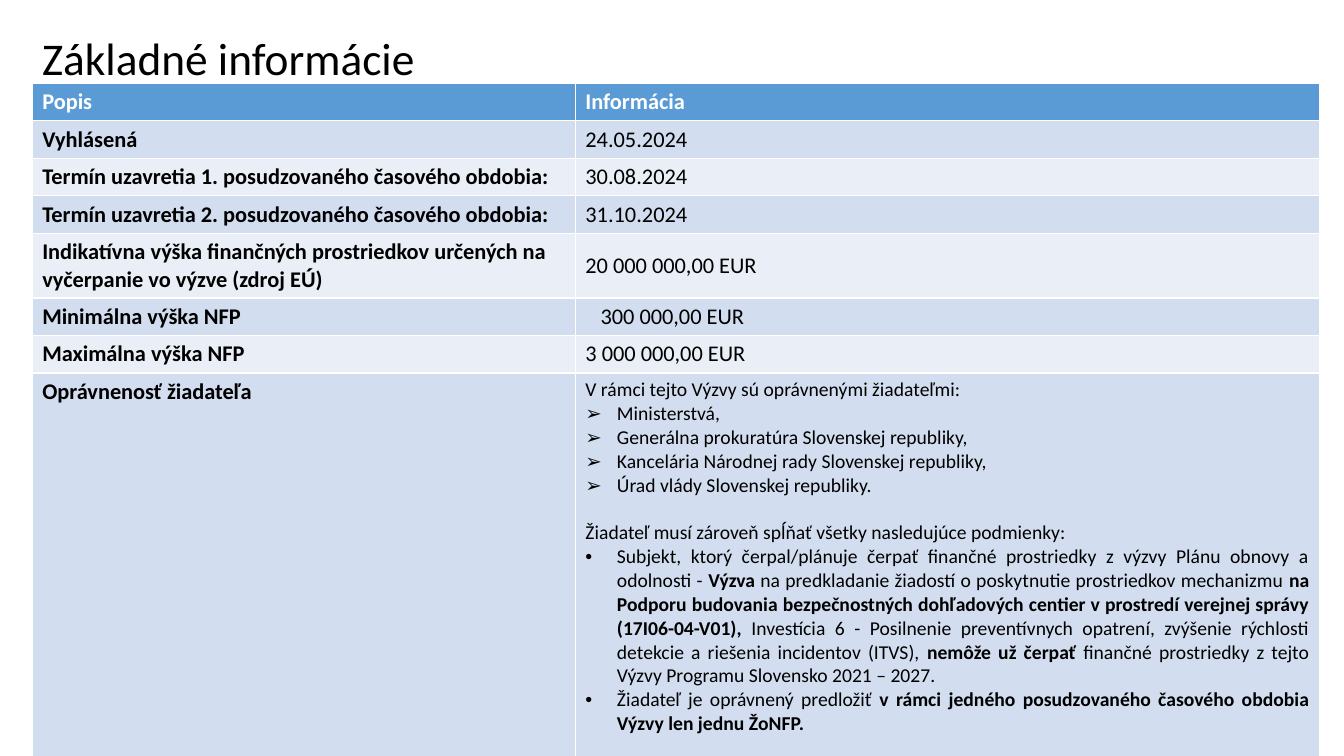
from dataclasses import dataclass

from lxml.etree import SubElement as Sub
from pptx import Presentation
from pptx.dml.color import RGBColor as RGB
from pptx.enum.text import MSO_ANCHOR as ANCHOR, PP_ALIGN as ALIGN
from pptx.oxml.ns import qn
from pptx.util import Pt


@dataclass(frozen=True)
class Theme:
    font: str = "Calibri"
    bullet_font: str = "Arial"
    black: str = "000000"
    white: str = "FFFFFF"
    header: str = "5B9BD5"
    bands: tuple = ("D2DEEF", "EAEFF7")
    title: float = 32.4
    title_end: float = 39.6
    cell: float = 16
    detail: float = 14
    hanging: float = 22.5
    blank_line: float = 17.1


T = Theme()

FACTS = [
    ("Vyhlásená", "24.05.2024"),
    ("Termín uzavretia 1. posudzovaného časového obdobia:", "30.08.2024"),
    ("Termín uzavretia 2. posudzovaného časového obdobia:", "31.10.2024"),
    ("Indikatívna výška finančných prostriedkov určených na vyčerpanie vo výzve (zdroj EÚ)",
     "20 000 000,00 EUR"),
    ("Minimálna výška NFP", "300 000,00 EUR"),
    ("Maximálna výška NFP", "3 000 000,00 EUR"),
]
FUNDS_ROW, MINIMUM_ROW = 4, 5
LINE_ROW = 26.8
ROW_HEIGHTS = [LINE_ROW] * 4 + [46.2] + [LINE_ROW] * 2 + [275]
COLUMN_WIDTHS = [388, 531.5]

APPLICANTS = [
    "Ministerstvá,",
    "Generálna prokuratúra Slovenskej republiky,",
    "Kancelária Národnej rady Slovenskej republiky,",
    "Úrad vlády Slovenskej republiky.",
]
CONDITIONS = [
    [("Subjekt, ktorý čerpal/plánuje čerpať finančné prostriedky z výzvy Plánu obnovy a odolnosti - ", False),
     ("Výzva", True),
     (" na predkladanie žiadostí o poskytnutie prostriedkov mechanizmu ", False),
     ("na Podporu budovania bezpečnostných dohľadových centier v prostredí verejnej správy (17I06-04-V01), ", True),
     ("Investícia 6 - Posilnenie preventívnych opatrení, zvýšenie rýchlosti detekcie a riešenia incidentov (ITVS), ",
      False),
     ("nemôže už čerpať ", True),
     ("finančné prostriedky z tejto Výzvy Programu Slovensko 2021 – 2027.", False)],
    [("Žiadateľ je oprávnený predložiť ", False),
     ("v rámci jedného posudzovaného časového obdobia Výzvy len jednu ŽoNFP.", True)],
]


def set_attrs(obj, **values):
    for name, value in values.items():
        setattr(obj, name, value)


def add_run(p, text, size, bold=False, color=T.black):
    r = p.add_run()
    r.text = text
    set_attrs(r.font, name=T.font, size=Pt(size), bold=bold)
    r.font.color.rgb = RGB.from_string(color)


def add_bullet(p, char):
    pPr = p._p.get_or_add_pPr()
    pPr.set("marL", str(Pt(T.hanging)))
    pPr.set("indent", str(-Pt(T.hanging)))
    Sub(pPr, qn("a:buFont"), typeface=T.bullet_font)
    Sub(pPr, qn("a:buChar"), char=char)


def fill_eligibility(tf):
    lines = [("", [("V rámci tejto Výzvy sú oprávnenými žiadateľmi: ", False)], 0)]
    lines += [("➢", [(name, False)], 0) for name in APPLICANTS]
    lines.append(("", [("Žiadateľ musí zároveň spĺňať všetky nasledujúce podmienky:", False)], T.blank_line))
    lines += [("•", runs, 0) for runs in CONDITIONS]
    for i, (bullet, runs, before) in enumerate(lines):
        p = tf.add_paragraph() if i else tf.paragraphs[0]
        set_attrs(p, alignment=ALIGN.JUSTIFY, space_before=Pt(before))
        if bullet:
            add_bullet(p, bullet)
        for text, bold in runs:
            add_run(p, text, T.detail, bold)


def add_title(s, x, y, w, h):
    sp = s.shapes.add_textbox(Pt(x), Pt(y), Pt(w), Pt(h))
    tf = sp.text_frame
    set_attrs(tf, word_wrap=True, vertical_anchor=ANCHOR.MIDDLE)
    p = tf.paragraphs[0]
    p.line_spacing = 0.9
    add_run(p, "Základné informácie", T.title)
    add_run(p, " ", T.title_end)


def add_info_table(s, x, y, w, h):
    rows = [("Popis", "Informácia"), *FACTS, ("Oprávnenosť žiadateľa", "")]
    table = s.shapes.add_table(len(rows), 2, Pt(x), Pt(y), Pt(w), Pt(h)).table
    for column, width in zip(table.columns, COLUMN_WIDTHS):
        column.width = Pt(width)
    for i, (texts, height) in enumerate(zip(rows, ROW_HEIGHTS)):
        table.rows[i].height = Pt(height)
        header = i == 0
        fill = T.header if header else T.bands[(i - 1) % 2]
        for j, text in enumerate(texts):
            cell = table.cell(i, j)
            cell.fill.solid()
            cell.fill.fore_color.rgb = RGB.from_string(fill)
            if text:
                add_run(cell.text_frame.paragraphs[0], text, T.cell, header or j == 0,
                        T.white if header else T.black)
    for j in range(2):
        table.cell(FUNDS_ROW, j).vertical_anchor = ANCHOR.MIDDLE
    table.cell(MINIMUM_ROW, 1).margin_left = Pt(18)
    fill_eligibility(table.cell(len(rows) - 1, 1).text_frame)


def main():
    prs = Presentation()
    set_attrs(prs, slide_width=Pt(960), slide_height=Pt(540))
    s = prs.slides.add_slide(prs.slide_layouts[6])
    add_title(s, 23, 22.5, 720, 37)
    add_info_table(s, 23, 59.5, sum(COLUMN_WIDTHS), sum(ROW_HEIGHTS))
    prs.save("out.pptx")


if __name__ == "__main__":
    main()
